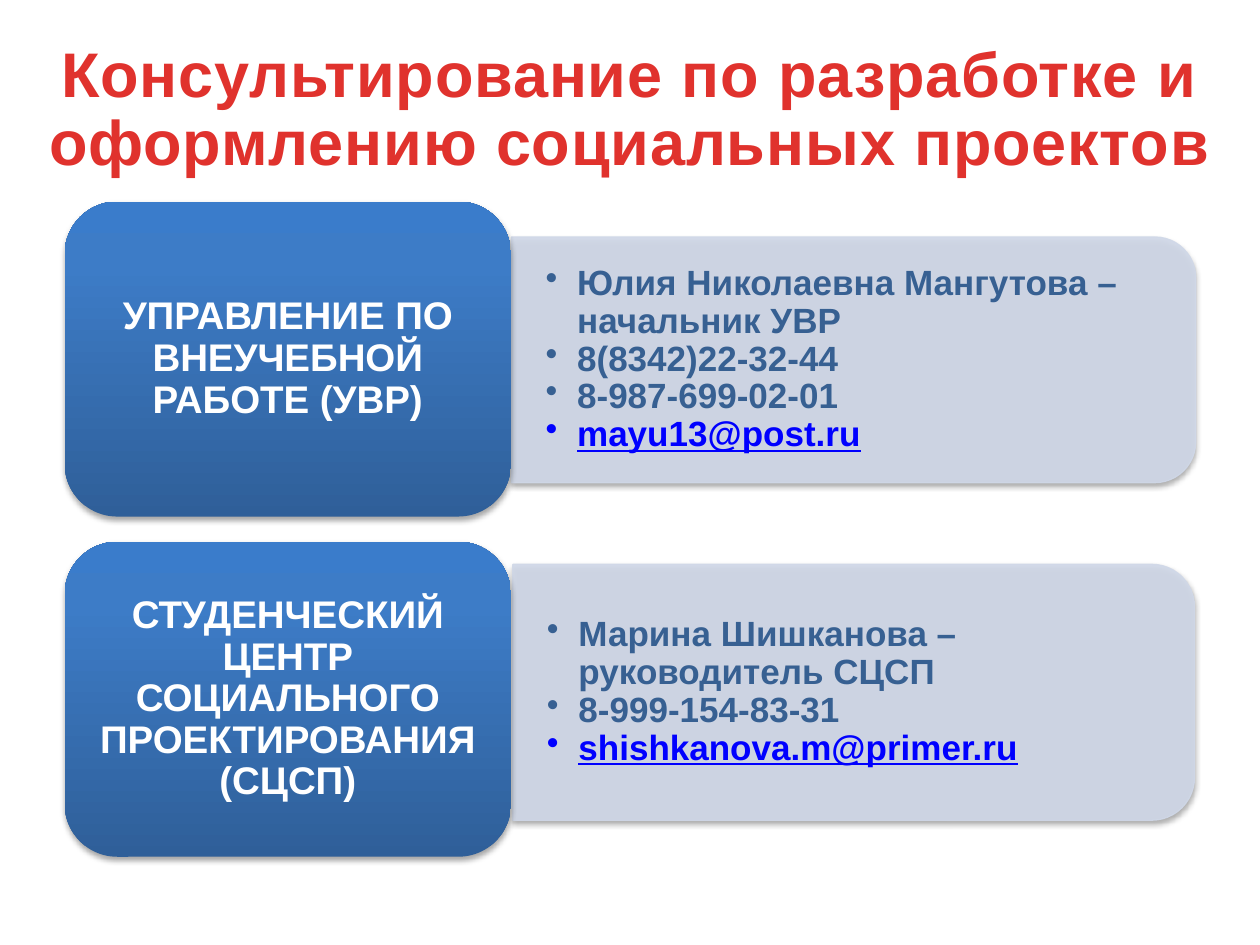
import pptx
import pptx.dml.color
import pptx.enum.shapes
import pptx.enum.text
import pptx.oxml
import pptx.oxml.ns
import pptx.util

Pt = pptx.util.Pt
SHAPE = pptx.enum.shapes.MSO_SHAPE
ALIGN = pptx.enum.text.PP_ALIGN
ANCHOR = pptx.enum.text.MSO_ANCHOR
NS = pptx.oxml.ns.nsdecls("a")
qn = pptx.oxml.ns.qn

RED, NAVY, BLUE, WHITE, PALE = "E0322D", "376092", "0000FF", "FFFFFF", "D0D8E8"
CARD_STOPS = [(0, "2F5F99"), (80, "3D7CC7"), (100, "3A7CCB")]

# Label, card centre, panel centre, panel width and height, contact lines
ROWS = [
    ("УПРАВЛЕНИЕ ПО ВНЕУЧЕБНОЙ РАБОТЕ (УВР)", 205.2, 205.6, 391, 140.4,
     ["Юлия Николаевна Мангутова – начальник УВР", "8(8342)22-32-44",
      "8-987-699-02-01", "mayu13@post.ru"]),
    ("СТУДЕНЧЕСКИЙ ЦЕНТР СОЦИАЛЬНОГО ПРОЕКТИРОВАНИЯ (СЦСП)", 399.6, 395.6, 389.5, 146.2,
     ["Марина Шишканова – руководитель СЦСП", "8-999-154-83-31",
      "shishkanova.m@primer.ru"]),
]


def color(value):
    return pptx.dml.color.RGBColor.from_string(value)


def add_shadow(s):
    s.shadow.inherit = False
    s._element.spPr.find(qn("a:effectLst")).append(pptx.oxml.parse_xml(
        f'<a:outerShdw {NS} blurRad="{Pt(3.1)}" dist="{Pt(1.8)}" dir="5400000" rotWithShape="0">'
        '<a:srgbClr val="000000"><a:alpha val="35000"/></a:srgbClr></a:outerShdw>'))


def add_text(tf, text, first=False, size=20, fill=NAVY, align=ALIGN.LEFT,
             underline=False, bullet=False, spacing=0):
    p = tf.paragraphs[0] if first else tf.add_paragraph()
    p.alignment, p.line_spacing = align, 0.9
    if bullet:
        pPr = p._p.get_or_add_pPr()
        pPr.set("marL", str(Pt(18)))
        pPr.set("indent", str(-Pt(18)))
        pPr.append(pptx.oxml.parse_xml(f'<a:buChar {NS} char="•"/>'))
    r = p.add_run()
    r.text = text
    r.font.name, r.font.size, r.font.bold = "Arial", Pt(size), True
    r.font.color.rgb = color(fill)
    if underline:
        r.font.underline = True
    if spacing:
        r._r.get_or_add_rPr().set("spc", str(round(spacing * 100)))


def set_frame(tf, x_inset, y_inset, anchor):
    tf.word_wrap = True
    tf.vertical_anchor = anchor
    tf.margin_left = tf.margin_right = Pt(x_inset)
    tf.margin_top = tf.margin_bottom = Pt(y_inset)


def add_panel(slide, cx, cy, width, height):
    # Upright shape turned a quarter, so its rounded top faces right
    s = slide.shapes.add_shape(SHAPE.ROUND_2_SAME_RECTANGLE, Pt(cx - height / 2),
                               Pt(cy - width / 2), Pt(height), Pt(width))
    s.rotation = 90
    for part in (s.fill, s.line.fill):
        part.solid()
        part.fore_color.rgb = color(PALE)
    s.line.width = Pt(0.75)
    for clr in s._element.spPr.iter(qn("a:srgbClr")):
        clr.append(pptx.oxml.parse_xml(f'<a:alpha {NS} val="90000"/>'))
    add_shadow(s)


def add_contacts(slide, cx, cy, width, height, lines):
    # Text stays clear of the panel's rounded corners
    tb = slide.shapes.add_textbox(Pt(cx - width / 2), Pt(cy - height / 2 + 6.8),
                                  Pt(width - 6.8), Pt(height - 13.6))
    set_frame(tb.text_frame, 19.5, 10, ANCHOR.MIDDLE)
    for i, line in enumerate(lines):
        link = "@" in line
        add_text(tb.text_frame, line, first=i == 0, bullet=True,
                 fill=BLUE if link else NAVY, underline=link)


def add_card(slide, cy, label):
    s = slide.shapes.add_shape(SHAPE.ROUNDED_RECTANGLE, Pt(37), Pt(cy - 90), Pt(255), Pt(180))
    s.fill.gradient()
    s.fill.gradient_angle = 90
    stops = s._element.spPr.find(qn("a:gradFill")).find(qn("a:gsLst"))
    for stop in list(stops):
        stops.remove(stop)
    for pos, value in CARD_STOPS:
        stops.append(pptx.oxml.parse_xml(
            f'<a:gs {NS} pos="{pos * 1000}"><a:srgbClr val="{value}"/></a:gs>'))
    s.line.fill.background()
    add_shadow(s)
    set_frame(s.text_frame, 6.6, 3.3, ANCHOR.MIDDLE)
    add_text(s.text_frame, label, first=True, size=22, fill=WHITE, align=ALIGN.CENTER)


def add_title(slide, text):
    tb = slide.shapes.add_textbox(0, Pt(21), Pt(720), Pt(85.7))
    set_frame(tb.text_frame, 7.2, 3.6, ANCHOR.TOP)
    tb.text_frame.auto_size = pptx.enum.text.MSO_AUTO_SIZE.SHAPE_TO_FIT_TEXT
    add_text(tb.text_frame, text, first=True, size=36, fill=RED,
             align=ALIGN.CENTER, spacing=0.5)


def main():
    prs = pptx.Presentation()
    prs.slide_width, prs.slide_height = Pt(720), Pt(540)
    slide = prs.slides.add_slide(prs.slide_layouts[6])

    # One row per office: panel, contacts, then the card on top
    panel_cx = 487.8
    for label, card_cy, panel_cy, width, height, lines in ROWS:
        add_panel(slide, panel_cx, panel_cy, width, height)
        add_contacts(slide, panel_cx, panel_cy, width, height, lines)
        add_card(slide, card_cy, label)

    add_title(slide, "Консультирование по разработке и оформлению социальных проектов")
    prs.save("out.pptx")


if __name__ == "__main__":
    main()
